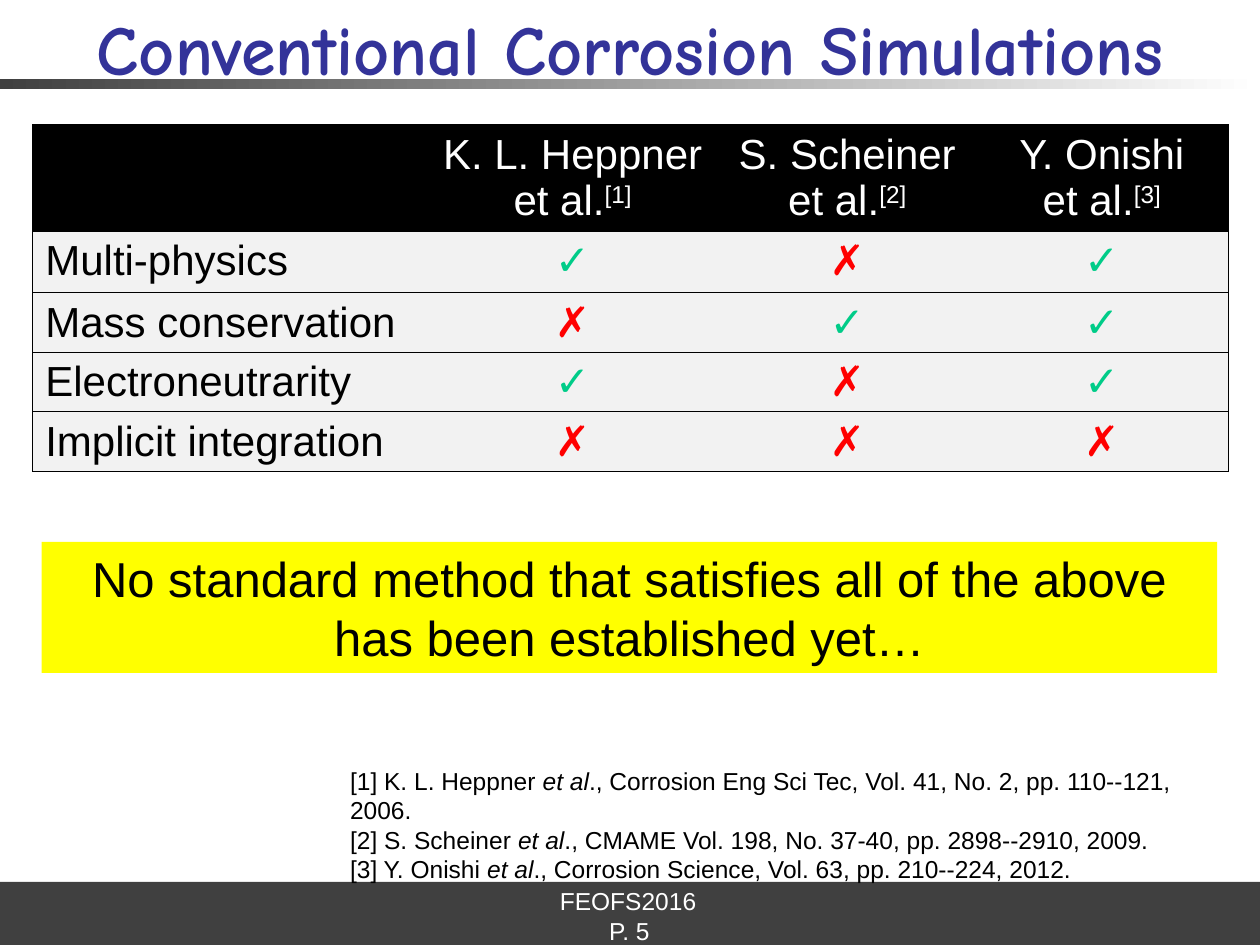
from lxml import etree
from pptx import Presentation
from pptx.dml.color import RGBColor
from pptx.enum.shapes import MSO_SHAPE
from pptx.enum.text import MSO_ANCHOR, PP_ALIGN
from pptx.oxml import parse_xml
from pptx.oxml.ns import nsdecls, qn
from pptx.util import Inches, Pt

RECT = MSO_SHAPE.RECTANGLE
TOP, MIDDLE = MSO_ANCHOR.TOP, MSO_ANCHOR.MIDDLE
LEFT, CENTER = PP_ALIGN.LEFT, PP_ALIGN.CENTER

BLACK = RGBColor(0x00, 0x00, 0x00)
WHITE = RGBColor(0xFF, 0xFF, 0xFF)
DARK = RGBColor(0x40, 0x40, 0x40)
NAVY = RGBColor(0x33, 0x33, 0x99)
PALE = RGBColor(0xBB, 0xE0, 0xE3)
LIGHT = RGBColor(0xF2, 0xF2, 0xF2)
GREEN = RGBColor(0x00, 0xCC, 0x88)
RED = RGBColor(0xFF, 0x00, 0x00)
YELLOW = RGBColor(0xFF, 0xFF, 0x00)

MARKS = {"✓": GREEN, "✗": RED}
AUTHORS = ["K. L. Heppner", "S. Scheiner", "Y. Onishi"]
CRITERIA = [
    ("Multi-physics", "✓✗✓"),
    ("Mass conservation", "✗✓✓"),
    ("Electroneutrarity", "✓✗✓"),
    ("Implicit integration", "✗✗✗"),
]
REFERENCES = [
    ("[1] K. L. Heppner ", "., Corrosion Eng Sci Tec, Vol. 41, No. 2, pp. 110--121, 2006."),
    ("[2] S. Scheiner ", "., CMAME Vol. 198, No. 37-40, pp. 2898--2910, 2009."),
    ("[3] Y. Onishi ", "., Corrosion Science, Vol. 63, pp. 210--224, 2012."),
]


class SlideBuilder:
    base = {"name": "Arial", "size": Pt(14), "bold": False, "italic": False}

    def __init__(self, slide):
        self.s = slide

    def run(self, p, text, color, **fmt):
        r = p.add_run()
        r.text = text
        for key, value in {**self.base, **fmt}.items():
            setattr(r.font, key, value)
        r.font.color.rgb = color
        return r

    def lines(self, p, text, color, **fmt):
        for i, line in enumerate(text.split("\n")):
            if i:
                p.add_line_break()
            self.run(p, line, color, **fmt)

    def frame(self, sp, anchor=TOP, margin=None, wrap=True):
        tf = sp.text_frame
        tf.word_wrap = wrap
        tf.vertical_anchor = anchor
        if margin is not None:
            for side in ("left", "top", "right", "bottom"):
                setattr(tf, f"margin_{side}", Inches(margin))
        return tf

    def title(self, text, *box):
        sp = self.s.shapes.title
        sp.left, sp.top, sp.width, sp.height = map(Inches, box)
        p = self.frame(sp, margin=0).paragraphs[0]
        p.alignment = CENTER
        r = self.run(p, text, NAVY, name="Comic Neue", size=Pt(40), bold=True)
        fill = r.font._element.find(qn("a:solidFill"))
        fill.addnext(parse_xml(
            f'<a:effectLst {nsdecls("a")}><a:outerShdw dist="35921" dir="2700000">'
            f'<a:srgbClr val="{PALE}"/></a:outerShdw></a:effectLst>'))

    def rect(self, color, *box, fade_to=None):
        sp = self.s.shapes.add_shape(RECT, *map(Inches, box))
        sp.shadow.inherit = False
        sp.line.fill.background()
        if fade_to is None:
            sp.fill.solid()
            sp.fill.fore_color.rgb = color
        else:
            sp.fill.gradient()
            sp.fill.gradient_angle = 0
            for stop, rgb in zip(sp.fill.gradient_stops, (color, fade_to)):
                stop.color.rgb = rgb
        return sp

    def banner(self, text, *box):
        p = self.frame(self.rect(YELLOW, *box), MIDDLE).paragraphs[0]
        p.alignment = CENTER
        self.lines(p, text, BLACK, size=Pt(28))

    def footer(self, text, *box, wrap=True):
        sp = self.s.shapes.add_textbox(*map(Inches, box))
        p = self.frame(sp, MIDDLE, 0.04, wrap).paragraphs[0]
        p.alignment = CENTER
        self.run(p, text, WHITE)

    def references(self, entries, *box):
        tf = self.frame(self.s.shapes.add_textbox(*map(Inches, box)))
        for i, (author, source) in enumerate(entries):
            p = tf.add_paragraph() if i else tf.paragraphs[0]
            self.run(p, author, BLACK)
            self.run(p, "et al", BLACK, italic=True)
            self.run(p, source, BLACK)

    def borders(self, cell, left, right):
        tcPr = cell._tc.get_or_add_tcPr()
        sides = {"lnL": left, "lnR": right, "lnT": True, "lnB": True}
        for i, (tag, visible) in enumerate(sides.items()):
            ln = etree.Element(qn(f"a:{tag}"), w=str(Pt(0.75)))
            if visible:
                fill = etree.SubElement(ln, qn("a:solidFill"))
                etree.SubElement(fill, qn("a:srgbClr"), val=str(BLACK))
            else:
                etree.SubElement(ln, qn("a:noFill"))
            tcPr.insert(i, ln)

    def table(self, authors, criteria, widths, heights, *box):
        table = self.s.shapes.add_table(
            len(heights), len(widths), *map(Inches, box)).table
        for col, width in zip(table.columns, widths):
            col.width = Inches(width)
        for row, height in zip(table.rows, heights):
            row.height = Inches(height)
        size = Pt(24)
        for c, author in enumerate(authors, 1):
            p = table.cell(0, c).text_frame.paragraphs[0]
            p.alignment = CENTER
            self.lines(p, f"{author}\net al.", WHITE, size=size)
            r = self.run(p, f"[{c}]", WHITE, size=size)
            r.font._element.set("baseline", "30000")
        for i, (name, marks) in enumerate(criteria, 1):
            p = table.cell(i, 0).text_frame.paragraphs[0]
            p.alignment = LEFT
            self.run(p, name, BLACK, size=size)
            for c, mark in enumerate(marks, 1):
                p = table.cell(i, c).text_frame.paragraphs[0]
                p.alignment = CENTER
                self.run(p, mark, MARKS[mark], size=size, bold=True)
        for i in range(len(heights)):
            for c in range(len(widths)):
                cell = table.cell(i, c)
                cell.fill.solid()
                cell.fill.fore_color.rgb = LIGHT if i else BLACK
                self.borders(cell, c == 0, c == len(widths) - 1)


def main():
    prs = Presentation()
    prs.slide_width, prs.slide_height = Inches(10), Inches(7.5)
    b = SlideBuilder(prs.slides.add_slide(prs.slide_layouts[5]))
    b.rect(DARK, 0, 0.63, 10, 0.08, fade_to=WHITE)
    b.rect(DARK, 0, 7, 10, 0.5)
    b.footer("FEOFS2016", 4.4, 7, 1.17, 0.3, wrap=False)
    title = b.s.shapes.title._element
    title.getparent().append(title)
    b.title("Conventional Corrosion Simulations", 0, 0.04, 10, 0.68)
    b.table(AUTHORS, CRITERIA, [3.12, 2.33, 2.03, 2.01],
            [0.73, 0.49, 0.41, 0.45, 0.41], 0.26, 0.99, 9.49, 2.9)
    b.banner("No standard method that satisfies all of the above\n"
             "has been established yet…", 0.33, 4.3, 9.33, 1.04)
    b.references(REFERENCES, 2.68, 6.03, 7.19, 0.81)
    b.footer("P. 5", 4.42, 7.28, 1.15, 0.22)
    prs.save("out.pptx")


if __name__ == "__main__":
    main()
